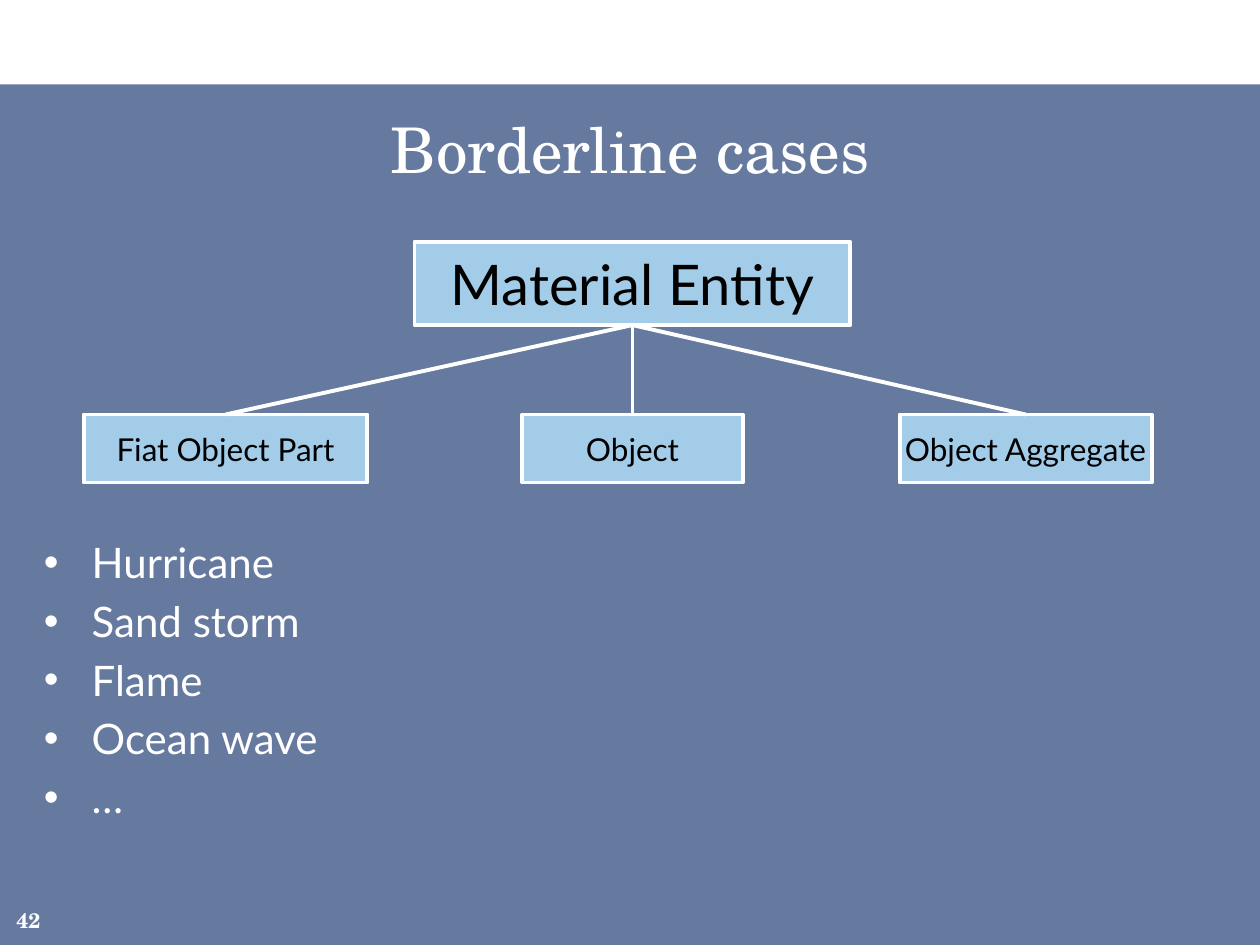
"""Build the "Borderline cases" slide with a small class hierarchy."""
from lxml import etree
from pptx import Presentation
from pptx import util as u
from pptx.dml.color import RGBColor
from pptx.enum import shapes, text
from pptx.oxml.ns import qn

SERIF, SANS = "TeX Gyre Schola", "Lato"
WHITE, BLACK, NAVY, SKY = "FFFFFF", "000000", "002060", "A2CCE8"


def color(value):
    return RGBColor.from_string(value)


def style(p, font, size, value, align):
    p.alignment = align
    for r in p.runs:
        r.font.name, r.font.size = font, u.Pt(size)
        r.font.color.rgb = color(value)


prs = Presentation()
prs.slide_width, prs.slide_height = u.Inches(10), u.Inches(7.5)
s = prs.slides.add_slide(prs.slide_layouts[6])
align, anchor = text.PP_ALIGN, text.MSO_ANCHOR

panel = s.shapes.add_shape(shapes.MSO_SHAPE.RECTANGLE, 0, u.Inches(0.67), u.Inches(10), u.Inches(6.83))
panel.shadow.inherit = False
panel.fill.solid()
panel.fill.fore_color.rgb = color(NAVY)
panel.line.fill.background()
fill_color = panel.fill._xPr.find(qn("a:solidFill"))[0]
etree.SubElement(fill_color, qn("a:alpha"), val="60000")

title = s.shapes.add_textbox(u.Inches(0.25), u.Inches(0.83), u.Inches(9.5), u.Inches(0.83))
tf = title.text_frame
tf.word_wrap = True
tf.text = "Borderline cases"
style(tf.paragraphs[0], SERIF, 36, WHITE, align.CENTER)

body = s.shapes.add_textbox(u.Inches(0.25), u.Inches(4.21), u.Inches(9.5), u.Inches(3.04))
tf = body.text_frame
tf.word_wrap = True
tf.text = "\n".join(["Hurricane", "Sand storm", "Flame", "Ocean wave", "…"])
for i, p in enumerate(tf.paragraphs):
    if i:
        p.space_before = u.Pt(4.8)
    pPr = p._p.get_or_add_pPr()
    pPr.set("marL", str(u.Inches(0.38)))
    pPr.set("indent", str(-u.Inches(0.38)))
    bullet_color = etree.SubElement(pPr, qn("a:buClr"))
    etree.SubElement(bullet_color, qn("a:srgbClr"), val=WHITE)
    etree.SubElement(pPr, qn("a:buFont"), typeface="Arial")
    etree.SubElement(pPr, qn("a:buChar"), char="•")
    style(p, SANS, 24, WHITE, align.LEFT)

number = s.shapes.add_textbox(u.Inches(-0.08), u.Inches(7.1), u.Inches(0.5), u.Inches(0.4))
tf = number.text_frame
tf.word_wrap = True
tf.vertical_anchor = anchor.MIDDLE
tf.text = "42"
style(tf.paragraphs[0], SERIF, 12, WHITE, align.RIGHT)
tf.paragraphs[0].runs[0].font.bold = True

nodes = [
    ("Material Entity", 5.02, 1.92, 3.46, 0.66, 32),
    ("Fiat Object Part", 1.79, 3.29, 2.25, 0.54, 18),
    ("Object", 5.02, 3.29, 1.75, 0.54, 18),
    ("Object Aggregate", 8.14, 3.29, 2, 0.54, 18),
]
boxes = []
for label, center, top, width, height, size in nodes:
    sp = s.shapes.add_shape(shapes.MSO_SHAPE.RECTANGLE, u.Inches(center - width / 2),
                            u.Inches(top), u.Inches(width), u.Inches(height))
    sp.shadow.inherit = False
    sp.fill.solid()
    sp.fill.fore_color.rgb = color(SKY)
    sp.line.color.rgb = color(WHITE)
    sp.line.width = u.Pt(2.25)
    tf = sp.text_frame
    tf.word_wrap = False
    tf.vertical_anchor = anchor.MIDDLE
    tf.text = label
    style(tf.paragraphs[0], SANS, size, BLACK, align.CENTER)
    boxes.append(sp)

parent, *children = boxes
for child in children:
    line = s.shapes.add_connector(shapes.MSO_CONNECTOR.STRAIGHT, 0, 0, 0, 0)
    line.begin_connect(parent, 2)
    line.end_connect(child, 0)
    line.line.color.rgb = color(WHITE)
    line.line.width = u.Pt(2.25)
    etree.SubElement(line._element.spPr, qn("a:effectLst"))

prs.save("out.pptx")
